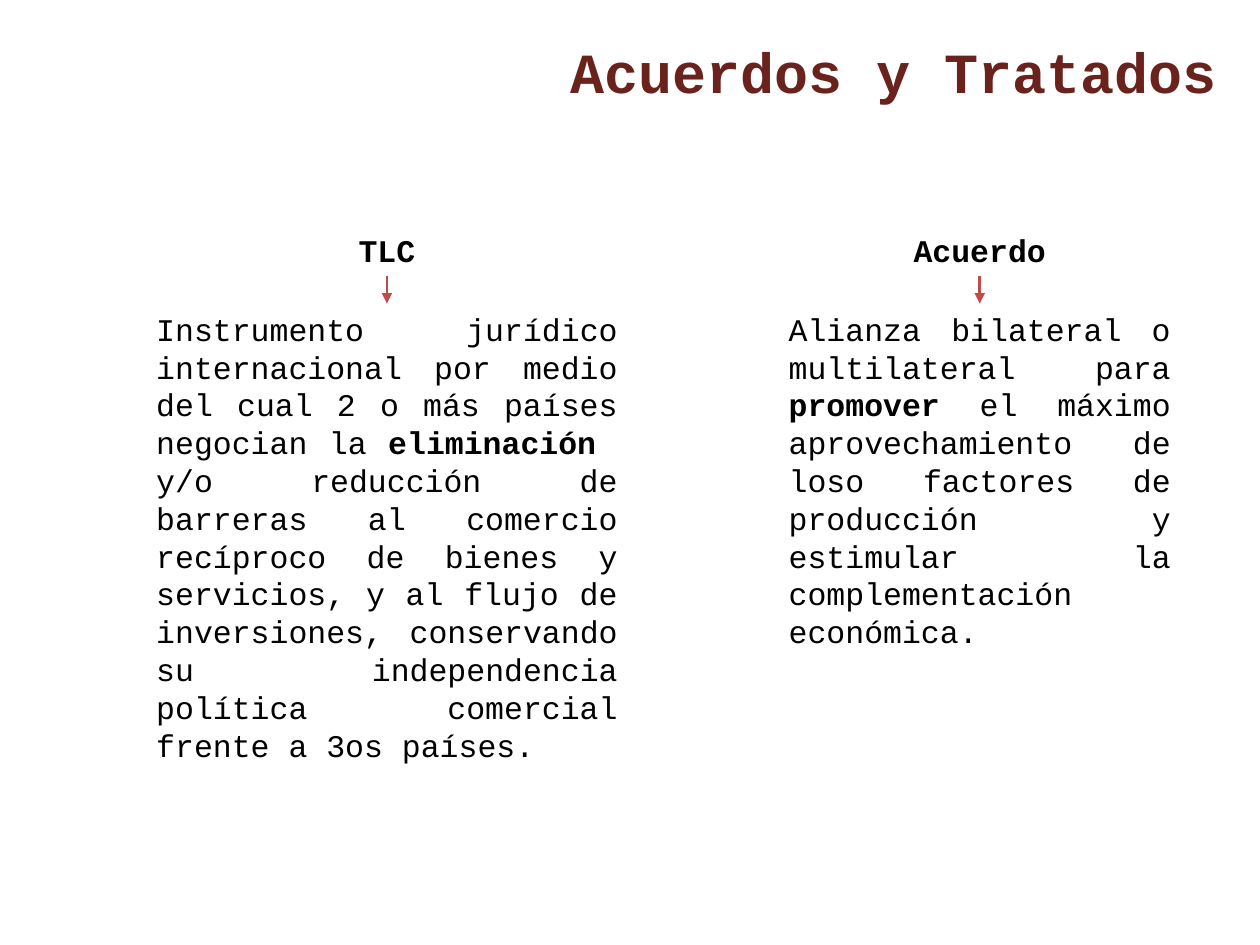
from dataclasses import dataclass

from lxml import etree
from pptx import Presentation
from pptx.dml.color import RGBColor
from pptx.enum.shapes import MSO_CONNECTOR
from pptx.enum.text import MSO_ANCHOR, MSO_AUTO_SIZE, PP_ALIGN
from pptx.oxml.ns import qn
from pptx.util import Cm, Pt

LEFT, MID, RIGHT = PP_ALIGN.JUSTIFY, PP_ALIGN.CENTER, PP_ALIGN.RIGHT
STRAIGHT = MSO_CONNECTOR.STRAIGHT
MIDDLE = MSO_ANCHOR.MIDDLE
NO_FIT = MSO_AUTO_SIZE.NONE


@dataclass
class Theme:
    font: str = "Courier New"
    title: RGBColor = RGBColor(0x6A, 0x22, 0x1D)
    text: RGBColor = RGBColor(0, 0, 0)
    arrow: RGBColor = RGBColor(0xBF, 0x4C, 0x48)
    big: float = 32.4
    small: float = 18
    line: float = 1.5


theme = Theme()


def style(run, size, color, bold):
    run.font.name = theme.font
    run.font.size = Pt(size)
    run.font.color.rgb = color
    run.font.bold = bold


def add_text(x, y, w, h, align, parts):
    """Add a text box; parts holds pairs of text and bold."""
    box = slide.shapes.add_textbox(Cm(x), Cm(y), Cm(w), Cm(h))
    box.text_frame.word_wrap = True
    para = box.text_frame.paragraphs[0]
    para.alignment = align
    for text, bold in parts:
        run = para.add_run()
        run.text = text
        style(run, theme.small, theme.text, bold)


deck = Presentation()
deck.slide_width, deck.slide_height = Cm(25.4), Cm(19.05)
slide = deck.slides.add_slide(deck.slide_layouts[5])

# Title
title = slide.shapes.title
title.left, title.top = Cm(10.49), Cm(0.61)
title.width, title.height = Cm(14.3), Cm(1.63)
frame = title.text_frame
frame.text = "Acuerdos y Tratados"
frame.auto_size = NO_FIT
frame.vertical_anchor = MIDDLE
frame.paragraphs[0].alignment = RIGHT
style(frame.paragraphs[0].runs[0], theme.big, theme.title, True)

# Columns: heading, left edge, width, height, definition
columns = [
    ("TLC", 2.9, 9.8, 9.5, [
        ("Instrumento jurídico internacional por medio del cual 2 o más "
         "países negocian la ", False),
        ("eliminación ", True),
        (" y/o reducción de barreras al comercio recíproco de bienes y "
         "servicios, y al flujo de inversiones, conservando su "
         "independencia política comercial frente a 3os países.", False)]),
    ("Acuerdo", 15.65, 8.2, 7.19, [
        ("Alianza bilateral o multilateral para ", False),
        ("promover", True),
        (" el máximo aprovechamiento de loso factores de producción y "
         "estimular la complementación económica.", False)]),
]
head_w, head_h, head_y = 4.19, 1.02, 4.53
arrow_y, body_y = 5.56, 6.12

for head, x, w, h, parts in columns:
    center = x + w / 2
    add_text(center - head_w / 2, head_y, head_w, head_h, MID, [(head, True)])
    add_text(x, body_y, w, h, LEFT, parts)

    # Arrow from heading to definition
    arrow = slide.shapes.add_connector(
        STRAIGHT, Cm(center), Cm(arrow_y), Cm(center), Cm(body_y))
    arrow.line.color.rgb = theme.arrow
    arrow.line.width = Pt(theme.line)
    tip = etree.SubElement(arrow.line._get_or_add_ln(), qn("a:tailEnd"))
    tip.set("type", "triangle")
    etree.SubElement(arrow._element.spPr, qn("a:effectLst"))

deck.save("out.pptx")
